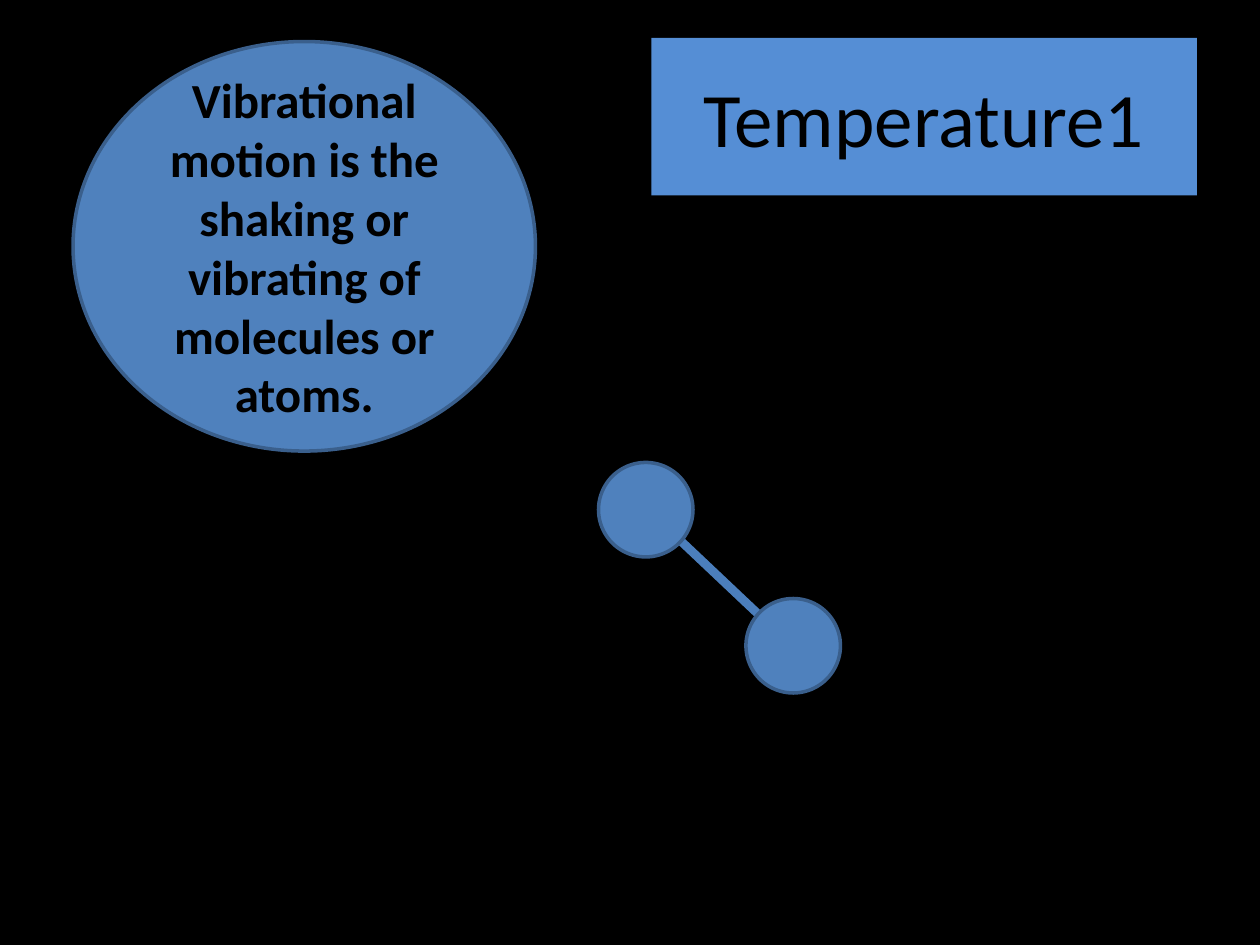
"""Build a slide on vibrational motion with a two-atom molecule."""
from pptx import Presentation
from pptx.dml.color import RGBColor
from pptx.enum.shapes import MSO_CONNECTOR, MSO_SHAPE
from pptx.enum.text import MSO_ANCHOR, PP_ALIGN
from pptx.oxml.ns import qn
from pptx.util import Inches, Pt
from lxml import etree

BLACK = RGBColor(0x00, 0x00, 0x00)
TITLE_BLUE = RGBColor(0x55, 0x8E, 0xD5)
BLUE = RGBColor(0x4F, 0x81, 0xBD)
EDGE = RGBColor(0x3A, 0x5F, 0x8C)
BOND = RGBColor(0x4B, 0x7E, 0xBC)


def add_shape(s, kind, x, y, w, h, fill, edge=None):
    sp = s.shapes.add_shape(kind, Inches(x), Inches(y), Inches(w), Inches(h))
    sp.shadow.inherit = False
    sp.fill.solid()
    sp.fill.fore_color.rgb = fill
    if edge is None:
        sp.line.fill.background()
    else:
        sp.line.color.rgb = edge
        sp.line.width = Pt(2)
    return sp


def add_text(sp, text, size, bold=False):
    tf = sp.text_frame
    tf.word_wrap = True
    tf.vertical_anchor = MSO_ANCHOR.MIDDLE
    p = tf.paragraphs[0]
    p.alignment = PP_ALIGN.CENTER
    r = p.add_run()
    r.text = text
    r.font.name = "Calibri"
    r.font.size = Pt(size)
    r.font.bold = bold
    r.font.color.rgb = BLACK


prs = Presentation()
prs.slide_width = Inches(10)
prs.slide_height = Inches(7.5)
s = prs.slides.add_slide(prs.slide_layouts[6])
s.background.fill.solid()
s.background.fill.fore_color.rgb = BLACK

bond = s.shapes.add_connector(
    MSO_CONNECTOR.STRAIGHT, Inches(4.86), Inches(3.78), Inches(6.5), Inches(5.33))
bond.line.color.rgb = BOND
bond.line.width = Pt(5)
etree.SubElement(bond._element.spPr, qn("a:effectLst"))

title = add_shape(s, MSO_SHAPE.RECTANGLE, 5.17, 0.3, 4.33, 1.25, TITLE_BLUE)
add_text(title, "Temperature1", 44)

definition = add_shape(s, MSO_SHAPE.OVAL, 0.58, 0.33, 3.67, 3.25, BLUE, EDGE)
add_text(definition, "Vibrational motion is the shaking or vibrating of molecules or atoms.", 28, True)

for x, y in [(4.75, 3.67), (5.92, 4.75)]:
    add_shape(s, MSO_SHAPE.OVAL, x, y, 0.75, 0.75, BLUE, EDGE)

prs.save("out.pptx")
